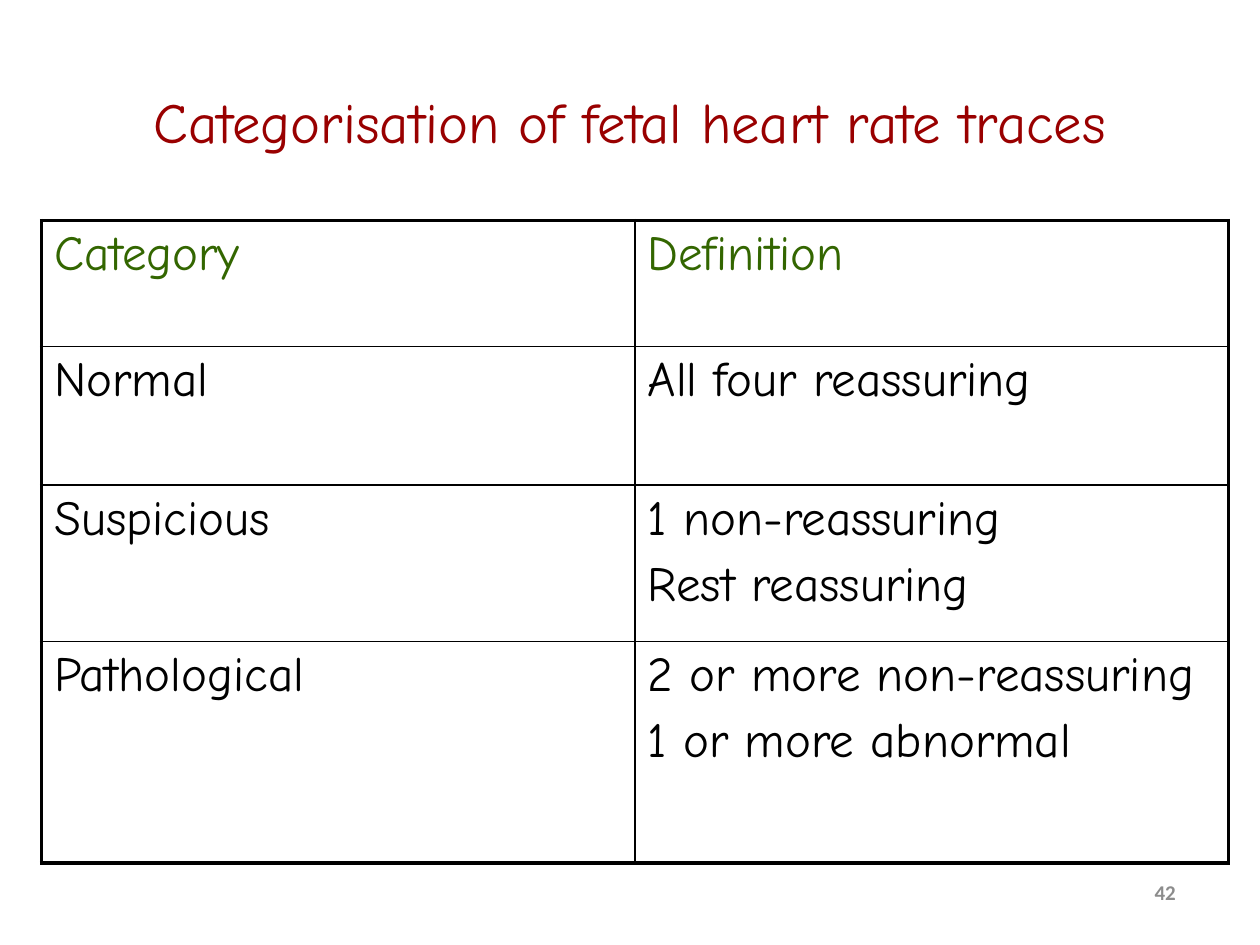
from dataclasses import dataclass

from lxml import etree
from pptx import Presentation
from pptx import util as u
from pptx.dml.color import RGBColor
from pptx.enum import text
from pptx.oxml import ns


@dataclass(frozen=True)
class Theme:
    font: str = "Comic Neue"
    number_font: str = "Calibri"
    title: str = "990000"
    heading: str = "336600"
    body: str = "000000"
    number: str = "8C8C8C"
    title_size: float = 32.4
    body_size: float = 28
    number_size: float = 12
    outer_line: float = 2.25
    inner_line: float = 1


THEME = Theme()
ROWS = [
    ("Category", "Definition"),
    ("Normal", "All four reassuring"),
    ("Suspicious", "1 non-reassuring\nRest reassuring"),
    ("Pathological", "2 or more non-reassuring\n1 or more abnormal"),
]
ROW_HEIGHTS = (1, 1.1, 1.24, 1.76)


def style(para, font, size, color, bold=False):
    for span in para.runs:
        span.font.name = font
        span.font.size = u.Pt(size)
        span.font.bold = bold
        span.font.color.rgb = RGBColor.from_string(color)


def add_text(page, box, words, align, anchor):
    frame = page.shapes.add_textbox(*map(u.Inches, box)).text_frame
    frame.word_wrap = True
    frame.vertical_anchor = anchor
    frame.text = words
    frame.paragraphs[0].alignment = align
    return frame


def add_title(page, box):
    frame = add_text(page, box, "Categorisation of fetal heart rate traces",
                     text.PP_ALIGN.CENTER, text.MSO_ANCHOR.TOP)
    frame.margin_top = u.Inches(0.11)
    style(frame.paragraphs[0], THEME.font, THEME.title_size, THEME.title)


def add_page_number(page, box):
    frame = add_text(page, box, "42", text.PP_ALIGN.RIGHT, text.MSO_ANCHOR.MIDDLE)
    style(frame.paragraphs[0], THEME.number_font, THEME.number_size, THEME.number, True)


def set_borders(cell, outer_sides):
    """Rule all four sides, heavier where the cell meets the table's edge."""
    props = cell._tc.get_or_add_tcPr()
    for index, side in enumerate("LRTB"):
        width = THEME.outer_line if side in outer_sides else THEME.inner_line
        line = etree.Element(ns.qn(f"a:ln{side}"), w=str(u.Pt(width)))
        fill = etree.SubElement(line, ns.qn("a:solidFill"))
        etree.SubElement(fill, ns.qn("a:srgbClr"), val=THEME.body)
        props.insert(index, line)


def add_categories(page, box):
    left, top, width, height = map(u.Inches, box)
    last_row, last_col = len(ROWS) - 1, len(ROWS[0]) - 1
    table = page.shapes.add_table(last_row + 1, last_col + 1,
                                  left, top, width, height).table
    table.first_row = table.horz_banding = False

    for r, (words, row_height) in enumerate(zip(ROWS, ROW_HEIGHTS)):
        table.rows[r].height = u.Inches(row_height)
        color = THEME.body if r else THEME.heading
        for c, content in enumerate(words):
            cell = table.cell(r, c)
            cell.fill.background()
            cell.text_frame.text = content
            for n, para in enumerate(cell.text_frame.paragraphs):
                style(para, THEME.font, THEME.body_size, color)
                if n:
                    para.space_before = u.Pt(0.2 * THEME.body_size)
            edges = {"L": c == 0, "R": c == last_col, "T": r == 0, "B": r == last_row}
            set_borders(cell, [side for side, outer in edges.items() if outer])


def main():
    deck = Presentation()
    deck.slide_width, deck.slide_height = u.Inches(10), u.Inches(7.5)
    page = deck.slides.add_slide(deck.slide_layouts[6])
    add_title(page, (0, 0.58, 10, 1.75))
    add_categories(page, (0.33, 1.75, 9.42, sum(ROW_HEIGHTS)))
    add_page_number(page, (7.35, 6.83, 2.08, 0.5))
    deck.save("out.pptx")


if __name__ == "__main__":
    main()
